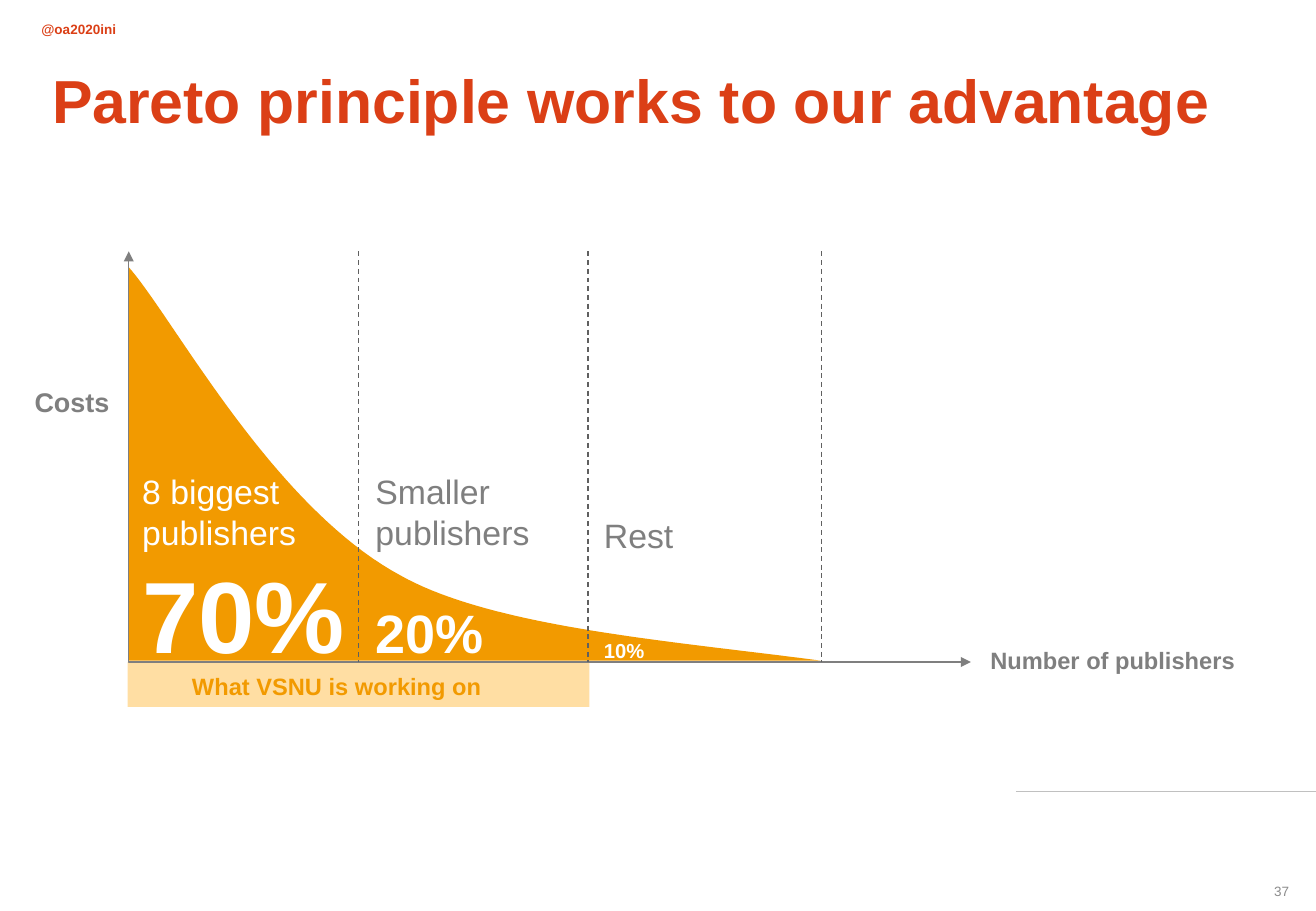
"""Build a slide showing publisher costs as a Pareto curve."""
from dataclasses import dataclass

from lxml import etree
from pptx import Presentation
from pptx import util as u
from pptx.dml.color import RGBColor
from pptx.enum import dml, shapes, text
from pptx.oxml.ns import qn

PX = 9144


@dataclass(frozen=True)
class Theme:
    font: str = "Arial"
    red: str = "DB3F16"
    orange: str = "F29A00"
    pale_orange: str = "FFDEA3"
    gray: str = "7F7F7F"
    page_gray: str = "8C8C8C"
    divider_gray: str = "606060"
    rule_gray: str = "C0C0C0"
    white: str = "FFFFFF"
    tiny: int = 8
    small: int = 12
    label: int = 14
    axis: int = 16
    body: int = 20
    medium: int = 32
    title: int = 36
    large: int = 60


theme = Theme()
presentation = Presentation()
presentation.slide_width = 1083 * PX
presentation.slide_height = 750 * PX
slide = presentation.slides.add_slide(presentation.slide_layouts[6])


def add_text(box, paragraphs, align=text.PP_ALIGN.LEFT, inset=(0, 0),
             anchor=text.MSO_ANCHOR.TOP):
    shape = slide.shapes.add_textbox(*(value * PX for value in box))
    frame = shape.text_frame
    frame.word_wrap = True
    frame.vertical_anchor = anchor
    frame.margin_left = frame.margin_right = inset[0] * PX
    frame.margin_top = frame.margin_bottom = inset[1] * PX
    for index, (words, size, color, bold, before) in enumerate(paragraphs):
        paragraph = frame.add_paragraph() if index else frame.paragraphs[0]
        paragraph.text = words
        paragraph.alignment = align
        paragraph.space_before = u.Pt(before)
        paragraph.font.name = theme.font
        paragraph.font.size = u.Pt(size)
        paragraph.font.bold = bold
        paragraph.font.color.rgb = RGBColor.from_string(color)


def add_line(start, end, color, width, dash=None):
    line = slide.shapes.add_connector(
        shapes.MSO_CONNECTOR.STRAIGHT, *(value * PX for value in start + end))
    line.line.color.rgb = RGBColor.from_string(color)
    line.line.width = u.Pt(width)
    line.line.dash_style = dash
    etree.SubElement(line._element.spPr, qn("a:effectLst"))


add_text((34, 17, 90, 17), [("@oa2020ini", theme.tiny, theme.red, True, 0)])
add_line((836, 652), (1083, 652), theme.rule_gray, 0.5)

band = slide.shapes.add_shape(
    shapes.MSO_SHAPE.RECTANGLE, 105 * PX, 545 * PX, 380 * PX, 37 * PX)
band.shadow.inherit = False
band.fill.solid()
band.fill.fore_color.rgb = RGBColor.from_string(theme.pale_orange)
band.line.fill.background()

STEPS = 40
curves = [
    ((106, 220), (143, 262), (224, 417), (330, 474)),
    ((330, 474), (407, 517), (556, 528), (676, 544)),
]
curve_points = []
for curve in curves:
    for step in range(1, STEPS + 1):
        t = step / STEPS
        weights = ((1 - t) ** 3, 3 * t * (1 - t) ** 2, 3 * t ** 2 * (1 - t), t ** 3)
        curve_points.append(tuple(
            PX * sum(weight * point[axis] for weight, point in zip(weights, curve))
            for axis in (0, 1)))
builder = slide.shapes.build_freeform(106 * PX, 220 * PX)
builder.add_line_segments(curve_points + [(106 * PX, 544 * PX)], close=True)
cost_area = builder.convert_to_shape()
cost_area.shadow.inherit = False
cost_area.fill.solid()
cost_area.fill.fore_color.rgb = RGBColor.from_string(theme.orange)
cost_area.line.fill.background()

builder = slide.shapes.build_freeform(106, 207, scale=PX)
builder.add_line_segments([(106, 545), (799, 545)], close=False)
axes = builder.convert_to_shape()
axes.shadow.inherit = False
axes.fill.background()
axes.line.color.rgb = RGBColor.from_string(theme.gray)
axes.line.width = u.Pt(0.75)
for end in ("a:headEnd", "a:tailEnd"):
    etree.SubElement(axes.line._get_or_add_ln(), qn(end), type="triangle")

for divider in (295, 484, 676):
    add_line((divider, 207), (divider, 545), theme.divider_gray, 0.75,
             dml.MSO_LINE.DASH)

add_text((33, 47, 1020, 76),
         [("Pareto principle works to our advantage", theme.title, theme.red, True, 0)],
         inset=(10, 5))

segments = [
    (117, 388, "8 biggest publishers", theme.white, "70%", theme.large, 0),
    (309, 388, "Smaller publishers", theme.gray, "20%", theme.medium, 28),
    (497, 424, "Rest", theme.gray, "10%", theme.small, 49),
]
for left, top, name, color, share, size, gap in segments:
    add_text((left, top, 177, 545 - top),
             [(name, theme.body, color, False, 0),
              (share, size, theme.white, True, gap)])

add_text((158, 553, 275, 30),
         [("What VSNU is working on", theme.label, theme.orange, True, 0)])
add_text((815, 532, 260, 49),
         [("Number of publishers", theme.label, theme.gray, True, 0)])
add_text((10, 317, 80, 49), [("Costs", theme.axis, theme.gray, True, 0)],
         align=text.PP_ALIGN.RIGHT)
add_text((976, 722, 85, 18), [("37", theme.tiny, theme.page_gray, False, 0)],
         align=text.PP_ALIGN.RIGHT, anchor=text.MSO_ANCHOR.BOTTOM)

presentation.save("out.pptx")
